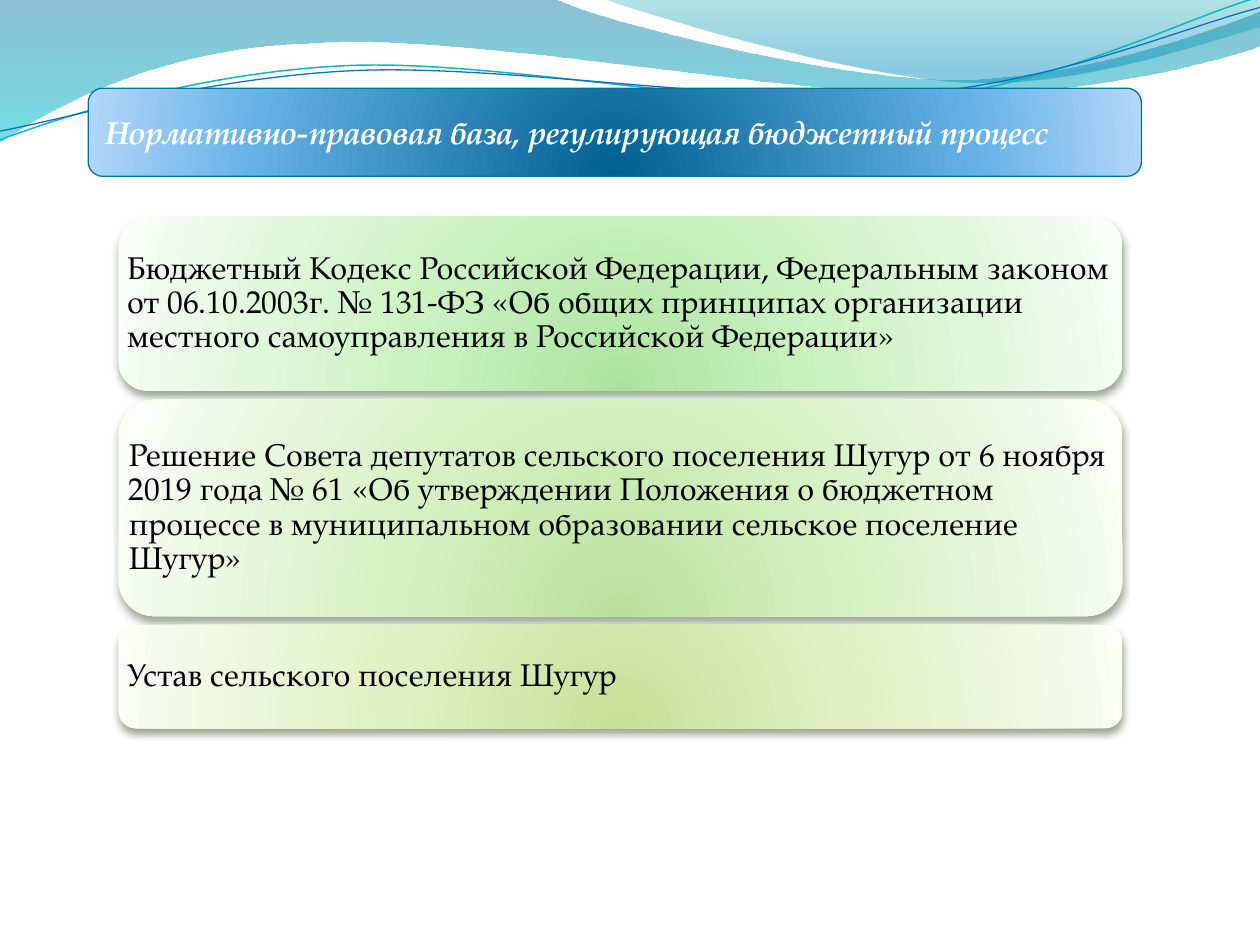
from dataclasses import dataclass
from math import cos, radians, sin

from pptx import Presentation
from pptx.dml.color import RGBColor
from pptx.enum.shapes import MSO_SHAPE
from pptx.enum.text import MSO_ANCHOR, PP_ALIGN
from pptx.oxml import parse_xml
from pptx.oxml.ns import nsdecls
from pptx.util import Inches, Pt

ROUNDED = MSO_SHAPE.ROUNDED_RECTANGLE
MIDDLE = MSO_ANCHOR.MIDDLE
LEFT = PP_ALIGN.LEFT


@dataclass(frozen=True)
class Theme:
    font: str = "TeX Gyre Pagella"
    size: int = 18
    title_text: str = "FFFFFF"
    title_line: str = "0074A1"
    title_fill: tuple = ((0, "006091"), (68, "64B1E7"), (100, "B1D6F9"))
    card_text: str = "000000"
    wide_wave: tuple = ((0, "0074A1", 45), (100, "00C6CF", 55))
    corner_wave: tuple = ((0, "00A1A9", 30), (80, "008BBF", 45))
    teal_line: str = "0AB8BF"
    blue_line: str = "0F6FC6"


THEME = Theme()
CARD_STOPS = (0, 43, 93, 100)
CARD_LEFT, CARD_TOP, CARD_WIDTH, CARD_GAP = 0.94, 1.72, 7.97, 0.07
CARD_INSET = 0.07
ROUND_INSET = 0.05
LINE_TILT = -2.7

CARDS = (
    (1.38, ("ACE49F", "CDF3C4", "EFFBED", "F9FFF8"), "2B4821",
     "Бюджетный Кодекс Российской Федерации, Федеральным законом от 06.10.2003г. "
     "№ 131-ФЗ «Об общих принципах организации местного самоуправления "
     "в Российской Федерации»"),
    (1.72, ("B9E19B", "D5F1C2", "F2FAEC", "FAFFF8"), "32461D",
     "Решение Совета депутатов сельского поселения Шугур от 6 ноября 2019 года № 61 "
     "«Об утверждении Положения о бюджетном процессе в муниципальном образовании "
     "сельское поселение Шугур»"),
    (0.82, ("C9DF97", "E0F0C1", "F5FAEC", "FCFEF8"), "3A4519",
     "Устав сельского поселения Шугур"),
)

WIDE_WAVE = (
    [(0, 0)], [(4.4, -0.01)],
    [(4.76, 0.17), (6.64, 0.63), (7.58, 0.63)],
    [(8.53, 0.63), (9.58, 0.26), (10, 0.09)],
    [(10.01, 0.36)],
    [(9.83, 0.44), (8.7, 0.76), (7.46, 0.75)],
    [(6.22, 0.75), (3.82, 0.28), (2.57, 0.34)],
    [(1.29, 0.36), (0.46, 0.83), (-0.01, 1.13)],
)
CORNER_WAVE = (
    [(4.79, -0.01)],
    [(5.09, 0.11), (6.82, 0.62), (7.69, 0.65)],
    [(8.56, 0.69), (9.61, 0.32), (10, 0.21)],
    [(10, 0)],
)
TEAL_LINE = (
    [(0, 1.11)],
    [(0.48, 0.93), (1.58, 0.57), (2.77, 0.52)],
    [(3.95, 0.47), (5.93, 0.89), (7.13, 0.8)],
    [(8.33, 0.71), (9.38, 0.15), (9.98, -0.02)],
)
BLUE_LINE = (
    [(0, 1.04)],
    [(0.47, 0.96), (1.64, 0.61), (2.83, 0.56)],
    [(4.03, 0.51), (5.97, 0.84), (7.17, 0.75)],
    [(8.36, 0.67), (9.41, 0.21), (10, 0.06)],
)


def set_gradient(shape, stops, direction):
    marks = ""
    for position, color, *opacity in stops:
        alpha = f'<a:alpha val="{opacity[0] * 1000}"/>' if opacity else ""
        marks += (f'<a:gs pos="{position * 1000}">'
                  f'<a:srgbClr val="{color}">{alpha}</a:srgbClr></a:gs>')
    gradient = parse_xml(f'<a:gradFill {nsdecls("a")} rotWithShape="1">'
                         f'<a:gsLst>{marks}</a:gsLst>{direction}</a:gradFill>')
    shape.fill.background()
    properties = shape._element.spPr
    properties.replace(properties.find("{*}noFill"), gradient)


def set_glow_fill(shape, stops):
    set_gradient(shape, stops, '<a:path path="circle"><a:fillToRect l="50000" '
                 't="130000" r="50000" b="-30000"/></a:path>')


def set_shadow(shape, color):
    effects = shape._element.spPr.find("{*}effectLst")
    effects.append(parse_xml(
        f'<a:outerShdw {nsdecls("a")} blurRad="{Pt(4.5)}" dist="{Pt(3)}" '
        'dir="5400000" rotWithShape="0">'
        f'<a:srgbClr val="{color}"><a:alpha val="48000"/></a:srgbClr></a:outerShdw>'))


def set_line(shape, color, width):
    shape.line.color.rgb = RGBColor.from_string(color)
    shape.line.width = Pt(width)


def set_text(shape, text, color, emphasis=False):
    frame = shape.text_frame
    frame.text = text
    frame.word_wrap = True
    frame.vertical_anchor = MIDDLE
    para = frame.paragraphs[0]
    para.alignment = LEFT
    font = para.runs[0].font
    font.name = THEME.font
    font.size = Pt(THEME.size)
    font.bold = font.italic = emphasis
    font.color.rgb = RGBColor.from_string(color)
    return frame, para


def turn(point, center, degrees):
    angle = radians(degrees)
    x, y = point[0] - center[0], point[1] - center[1]
    return (center[0] + x * cos(angle) - y * sin(angle),
            center[1] + x * sin(angle) + y * cos(angle))


def add_outline(slide, segments, close):
    points = [(Inches(x), Inches(y)) for segment in segments for x, y in segment]
    builder = slide.shapes.build_freeform(*points[0])
    builder.add_line_segments(points[1:], close=close)
    shape = builder.convert_to_shape()
    shape.shadow.inherit = False
    steps = iter(shape._element.spPr.findall(".//{*}lnTo"))
    for segment in segments[1:]:
        group = [next(steps) for _ in segment]
        if len(group) == 3:
            curve = parse_xml(f'<a:cubicBezTo {nsdecls("a")}/>')
            group[0].addprevious(curve)
            for step in group:
                curve.append(step[0])
                step.getparent().remove(step)
    return shape


def add_wave(slide, segments, stops):
    wave = add_outline(slide, segments, True)
    set_gradient(wave, stops, '<a:lin ang="5400000" scaled="0"/>')
    wave.line.fill.background()


def add_wave_line(slide, segments, center, color, width):
    level = [[turn(point, center, -LINE_TILT) for point in segment]
             for segment in segments]
    curve = add_outline(slide, level, False)
    curve.rotation = LINE_TILT
    curve.fill.background()
    set_line(curve, color, width)


def add_panel(slide, left, top, width, height, stops):
    panel = slide.shapes.add_shape(ROUNDED, Inches(left), Inches(top),
                                   Inches(width), Inches(height))
    panel.shadow.inherit = False
    set_glow_fill(panel, stops)
    return panel


def add_title(slide, text):
    title = add_panel(slide, 0.7, 0.7, 8.36, 0.7, THEME.title_fill)
    set_line(title, THEME.title_line, 0.75)
    set_text(title, text, THEME.title_text, emphasis=True)


def add_card(slide, top, height, colors, shadow, text):
    card = add_panel(slide, CARD_LEFT, top, CARD_WIDTH, height,
                     tuple(zip(CARD_STOPS, colors)))
    card.line.fill.background()
    set_shadow(card, shadow)
    frame, para = set_text(card, text, THEME.card_text)
    inset = Inches(max(0, CARD_INSET - ROUND_INSET * height))
    frame.margin_left = frame.margin_right = inset
    frame.margin_top = frame.margin_bottom = inset
    para.line_spacing = 0.9


def main():
    deck = Presentation()
    deck.slide_width, deck.slide_height = Inches(10), Inches(7.5)
    slide = deck.slides.add_slide(deck.slide_layouts[6])
    add_wave(slide, WIDE_WAVE, THEME.wide_wave)
    add_wave(slide, CORNER_WAVE, THEME.corner_wave)
    add_wave_line(slide, TEAL_LINE, (4.99, 0.58), THEME.teal_line, 0.85)
    add_wave_line(slide, BLUE_LINE, (5, 0.59), THEME.blue_line, 0.75)
    add_title(slide, "Нормативно-правовая база, регулирующая бюджетный процесс")
    top = CARD_TOP
    for height, colors, shadow, text in CARDS:
        add_card(slide, top, height, colors, shadow, text)
        top += height + CARD_GAP
    deck.save("out.pptx")


if __name__ == "__main__":
    main()
